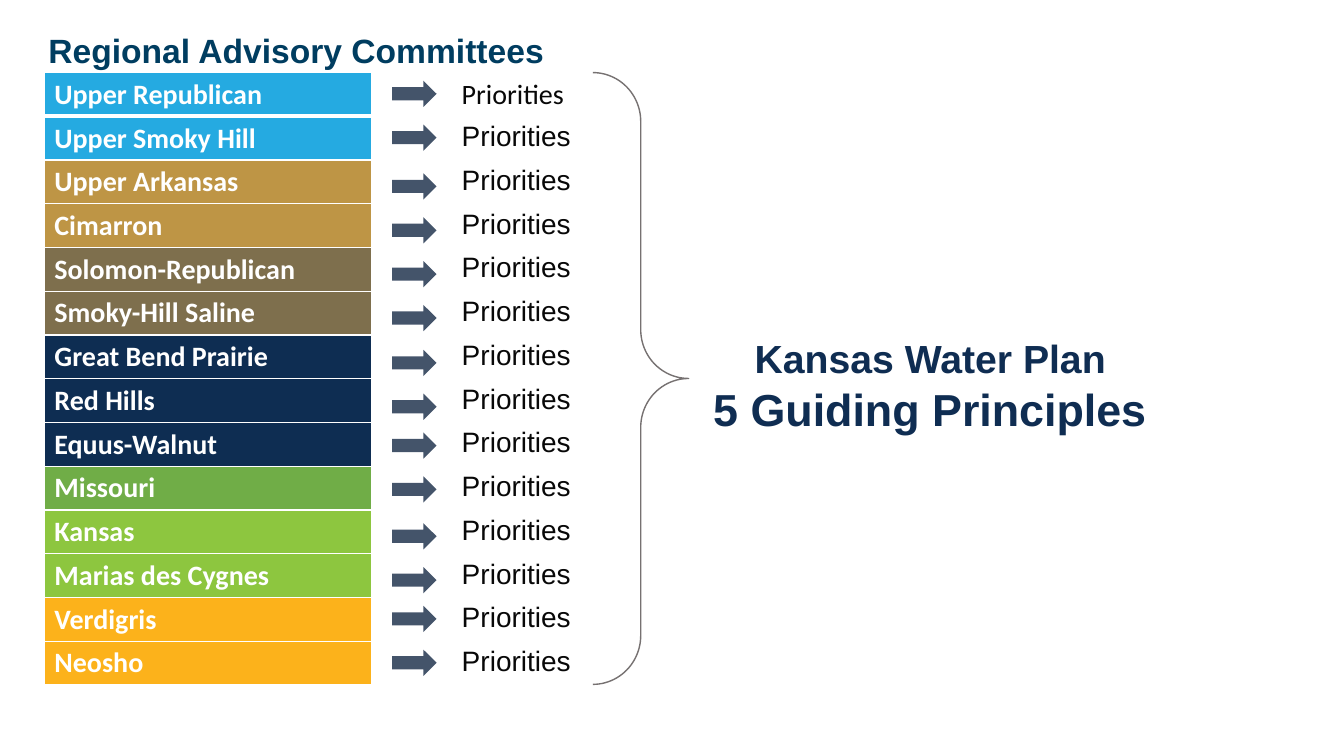
from dataclasses import dataclass

from lxml.etree import SubElement as Sub
from pptx import Presentation
from pptx.dml.color import RGBColor as Rgb
from pptx.enum.shapes import MSO_SHAPE as Shape
from pptx.enum.text import MSO_ANCHOR as Anchor, MSO_AUTO_SIZE as Fit, PP_ALIGN as Align
from pptx.oxml.ns import qn
from pptx.util import Inches, Pt


@dataclass(frozen=True)
class Theme:
    white: str = "FFFFFF"
    ink: str = "080808"
    navy: str = "0F2D52"
    teal: str = "003D60"
    slate: str = "44546A"
    gray: str = "767171"
    sans: str = "Arial"
    body: str = "Calibri"
    cell: int = 20
    head: int = 24
    plan: int = 28
    goal: int = 32


LOOK = Theme()
WIDE, HIGH = Inches(13.33), Inches(7.5)
GROUPS = [
    ("25AAE1", ["Upper Republican", "Upper Smoky Hill"]),
    ("BE9545", ["Upper Arkansas", "Cimarron"]),
    ("7E6F4D", ["Solomon-Republican", "Smoky-Hill Saline"]),
    ("0E2D52", ["Great Bend Prairie", "Red Hills", "Equus-Walnut"]),
    ("70AD47", ["Missouri"]),
    ("8DC63F", ["Kansas", "Marias des Cygnes"]),
    ("FCB21B", ["Verdigris", "Neosho"]),
]
ROWS = [(name, tint) for tint, names in GROUPS for name in names]
COLS = [24.38, 5.93, 12.08]
TOP, TALL = 9.6, 80.93
PAIRS = [10.67, 22.93, 34.53, 46.27, 57.2, 69.2, 80.13]
STEP = 5.8


def across(share):
    return round(WIDE * share / 100)


def down(share):
    return round(HIGH * share / 100)


def area(left, top, width, height):
    return across(left), down(top), across(width), down(height)


def write(para, text, size, color, font=LOOK.sans, bold=False, align=Align.LEFT):
    para.alignment = align
    run = para.add_run()
    run.text = text
    run.font.size = Pt(size)
    run.font.name = font
    run.font.bold = bold
    run.font.color.rgb = Rgb.from_string(color)


def set_frame(frame):
    frame.word_wrap = True
    frame.auto_size = Fit.SHAPE_TO_FIT_TEXT
    frame.vertical_anchor = Anchor.TOP


def add_title(slide):
    title = slide.shapes.title
    title.left, title.top, title.width, title.height = area(2.85, 3.33, 44.71, 6.67)
    set_frame(title.text_frame)
    write(title.text_frame.paragraphs[0], "Regional Advisory Committees",
          LOOK.head, LOOK.teal, bold=True)


def edge(cell, first):
    props = cell._tc.get_or_add_tcPr()
    for side in ("lnL", "lnR", "lnT", "lnB"):
        thick = 3 if first and side == "lnB" else 1
        line = Sub(props, qn(f"a:{side}"), w=str(Pt(thick)))
        Sub(Sub(line, qn("a:solidFill")), qn("a:srgbClr"), val=LOOK.white)


def add_grid(slide):
    frame = slide.shapes.add_table(
        len(ROWS), len(COLS), *area(3.3, TOP, sum(COLS), TALL))
    table = frame.table
    table.first_row = table.horz_banding = False
    for col, share in zip(table.columns, COLS):
        col.width = across(share)
    for row, (name, tint) in enumerate(ROWS):
        cells = list(table.rows[row].cells)
        for cell in cells:
            edge(cell, row == 0)
            cell.fill.background()
        cells[0].fill.solid()
        cells[0].fill.fore_color.rgb = Rgb.from_string(tint)
        write(cells[0].text_frame.paragraphs[0], name, LOOK.cell, LOOK.white,
              font=LOOK.body, bold=True)
        write(cells[2].text_frame.paragraphs[0], "Priorities", LOOK.cell, LOOK.ink,
              font=LOOK.sans if row else LOOK.body)


def add_arrow(slide, top):
    arrow = slide.shapes.add_shape(Shape.RIGHT_ARROW, *area(29.18, top, 3.3, 3.47))
    arrow.shadow.inherit = False
    arrow.fill.solid()
    arrow.fill.fore_color.rgb = Rgb.from_string(LOOK.slate)
    arrow.line.fill.background()


def add_brace(slide):
    brace = slide.shapes.add_shape(Shape.RIGHT_BRACE, *area(44.11, TOP, 7.13, TALL))
    brace.shadow.inherit = False
    brace.adjustments[0] = 0.51
    brace.adjustments[1] = 0.5
    brace.fill.background()
    brace.line.color.rgb = Rgb.from_string(LOOK.gray)
    brace.line.width = Pt(1)


def add_plan(slide):
    frame = slide.shapes.add_textbox(*area(51.24, 43.6, 35.93, 14.8)).text_frame
    set_frame(frame)
    write(frame.paragraphs[0], "Kansas Water Plan", LOOK.plan, LOOK.navy,
          bold=True, align=Align.CENTER)
    write(frame.add_paragraph(), "5 Guiding Principles", LOOK.goal, LOOK.navy,
          bold=True, align=Align.CENTER)


def main():
    deck = Presentation()
    deck.slide_width, deck.slide_height = WIDE, HIGH
    slide = deck.slides.add_slide(deck.slide_layouts.get_by_name("Title Only"))
    add_title(slide)
    add_grid(slide)
    for top in PAIRS:
        add_arrow(slide, top)
        add_arrow(slide, top + STEP)
    add_brace(slide)
    add_plan(slide)
    deck.save("out.pptx")


if __name__ == "__main__":
    main()
